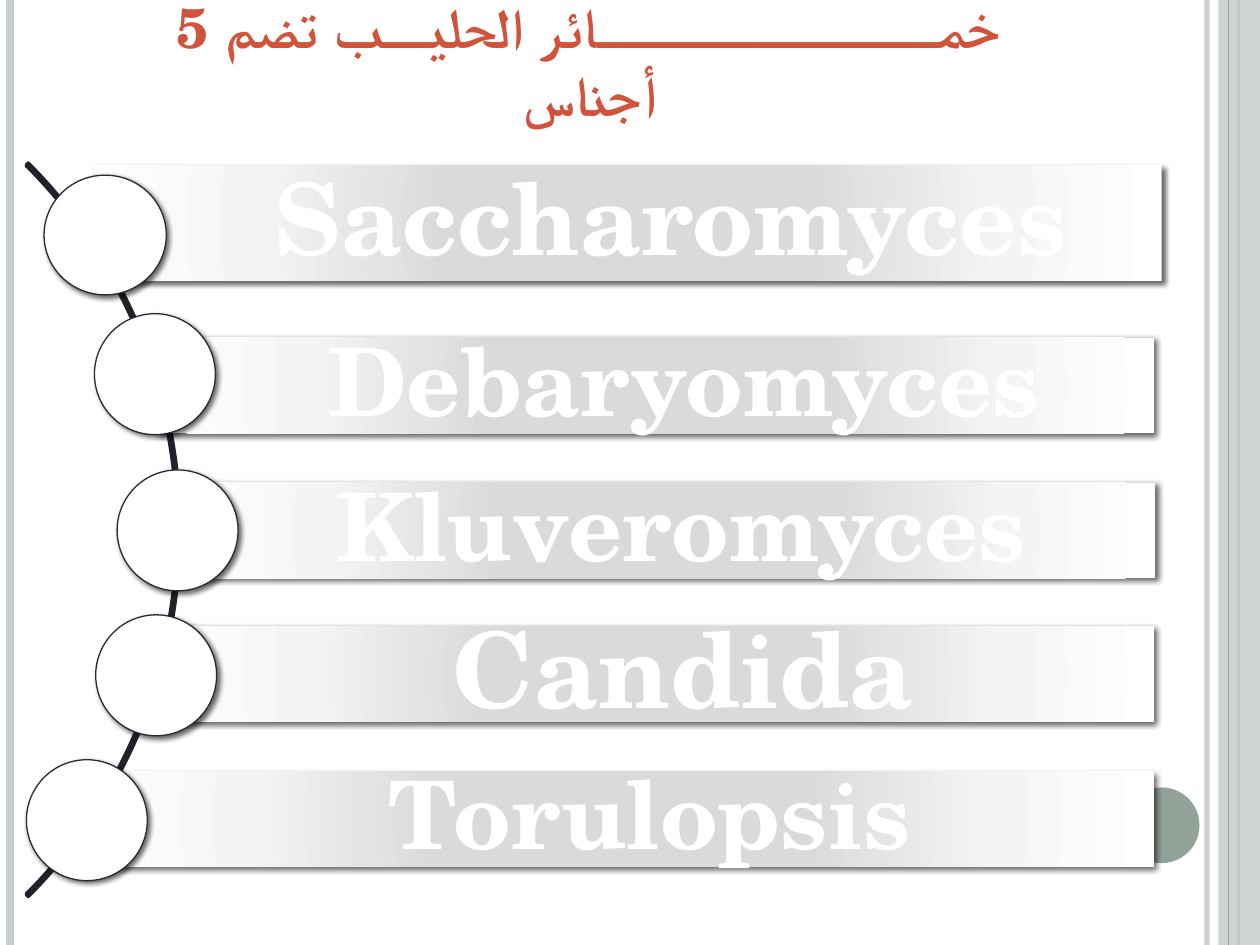
import dataclasses

import pptx
import pptx.dml.color
import pptx.enum.shapes
import pptx.enum.text
import pptx.oxml
import pptx.oxml.ns
import pptx.util

Inches = pptx.util.Inches
Pt = pptx.util.Pt
Kind = pptx.enum.shapes.MSO_SHAPE
Anchor = pptx.enum.text.MSO_ANCHOR
qn = pptx.oxml.ns.qn
NS = 'xmlns:a="http://schemas.openxmlformats.org/drawingml/2006/main"'
FONT = "TeX Gyre Schola"
STOPS = [(0, "DADADA"), (34, "DADADA"), (70, "F4F4F4"), (100, "FFFFFF")]


@dataclasses.dataclass
class Rule:
    x: float
    width: float
    color: str
    alpha: int = 100


@dataclasses.dataclass
class Genus:
    name: str
    left: float
    top: float
    right: float
    height: float
    size: int
    dot_x: float
    dot_y: float
    dot_w: float = 0.96
    dot_h: float = 0.96


RULES = [
    Rule(9.58, 3, "C8CECA", 93),
    Rule(0.08, 4.5, "C8CECA"),
    Rule(9.83, 1.5, "93A299"),
    Rule(9.75, 0.75, "93A299"),
]
GENERA = [
    Genus("Saccharomyces ", 0.75, 1.31, 9.22, 0.92, 57, 0.35, 1.39, 0.97, 0.95),
    Genus("Debaryomyces", 1.24, 2.68, 9.16, 0.76, 54, 0.75, 2.49),
    Genus(" Kluveromyces", 1.41, 3.83, 9.17, 0.76, 54, 0.93, 3.73),
    Genus("Candida", 1.24, 4.97, 9.16, 0.76, 60, 0.76, 4.88),
    Genus("Torulopsis", 0.69, 6.12, 9.16, 0.76, 54, 0.21, 6.03),
]


def rgb(code: str) -> pptx.dml.color.RGBColor:
    return pptx.dml.color.RGBColor.from_string(code)


def node(xml: str):
    return pptx.oxml.parse_xml(xml.replace(" NS", " " + NS, 1))


def fade(fill, alpha: int) -> None:
    color = fill._xPr.find(qn("a:solidFill"))[0]
    color.append(node(f'<a:alpha NS val="{alpha * 1000}"/>'))


def draw(slide, kind, x: float, y: float, w: float, h: float,
         fill: str = "", line: str = "", width: float = 0.75):
    shape = slide.shapes.add_shape(kind, Inches(x), Inches(y), Inches(w), Inches(h))
    if fill:
        shape.fill.solid()
        shape.fill.fore_color.rgb = rgb(fill)
    else:
        shape.fill.background()
    if line:
        shape.line.color.rgb = rgb(line)
        shape.line.width = Pt(width)
    else:
        shape.line.fill.background()
    shape.shadow.inherit = False
    return shape


def shade(shape) -> None:
    shape._element.spPr.find(qn("a:effectLst")).append(node(
        f'<a:outerShdw NS blurRad="{Pt(3)}" dist="{Pt(2)}" dir="2700000" '
        'algn="tl" rotWithShape="0"><a:srgbClr val="000000">'
        '<a:alpha val="60000"/></a:srgbClr></a:outerShdw>'))


def blend(shape) -> None:
    stops = "".join(f'<a:gs pos="{pos * 1000}"><a:srgbClr val="{code}"/></a:gs>'
                    for pos, code in STOPS)
    props = shape._element.spPr
    props.replace(props.find(qn("a:noFill")), node(
        f'<a:gradFill NS rotWithShape="1"><a:gsLst>{stops}</a:gsLst>'
        '<a:path path="circle"><a:fillToRect l="100000" t="100000" '
        'r="100000" b="100000"/></a:path></a:gradFill>'))


def write(slide, x: float, y: float, w: float, h: float,
          text: str, size: int, color: str, anchor):
    box = slide.shapes.add_textbox(Inches(x), Inches(y), Inches(w), Inches(h))
    frame = box.text_frame
    frame.text = text
    frame.word_wrap = True
    frame.vertical_anchor = anchor
    para = frame.paragraphs[0]
    para.alignment = pptx.enum.text.PP_ALIGN.CENTER
    para._p.get_or_add_pPr().set("rtl", "1")
    font = para.runs[0].font
    font.name = FONT
    font.size = Pt(size)
    font.bold = True
    font.color.rgb = rgb(color)
    font._element.append(node(f'<a:cs NS typeface="{FONT}"/>'))
    return frame


def add_rule(slide, rule: Rule) -> None:
    line = slide.shapes.add_connector(
        pptx.enum.shapes.MSO_CONNECTOR.STRAIGHT,
        Inches(rule.x), Inches(0), Inches(rule.x), Inches(7.5))
    line.line.color.rgb = rgb(rule.color)
    line.line.width = Pt(rule.width)
    if rule.alpha < 100:
        fade(line.line.fill, rule.alpha)
    line._element.spPr.append(node("<a:effectLst NS/>"))


def add_genus(slide, item: Genus) -> None:
    area = (item.left, item.top, item.right - item.left, item.height)
    bar = draw(slide, Kind.RECTANGLE, *area)
    blend(bar)
    shade(bar)
    frame = write(slide, *area, item.name, item.size, "FFFFFF", Anchor.MIDDLE)
    para = frame.paragraphs[0]
    para.line_spacing = 0.9
    para.space_after = Pt(0)
    after = para._p.pPr.find(qn("a:spcAft"))
    after.replace(after[0], node('<a:spcPct NS val="35000"/>'))
    frame.margin_left = Inches(0.61)
    frame.margin_right = frame.margin_top = frame.margin_bottom = Inches(item.size / 360)
    dot = draw(slide, Kind.OVAL, item.dot_x, item.dot_y,
               item.dot_w, item.dot_h, "FFFFFF", "292934")
    shade(dot)


def main() -> None:
    deck = pptx.Presentation()
    deck.slide_width, deck.slide_height = Inches(10), Inches(7.5)
    slide = deck.slides.add_slide(deck.slide_layouts[6])

    for rule in RULES[:3]:
        add_rule(slide, rule)
    band = draw(slide, Kind.RECTANGLE, 9.67, 0, 0.33, 7.5, "C8CECA")
    fade(band.fill, 87)
    add_rule(slide, RULES[3])
    draw(slide, Kind.OVAL, 8.92, 6.25, 0.6, 0.6, "93A299")

    title = write(slide, 0.59, 0.52, 8.17, 0.54,
                  "خمـــــــــــــــائر الحليــب تضم 5 أجناس",
                  32, "D2533C", Anchor.BOTTOM)
    title.margin_left = title.margin_right = Inches(0.5)
    title.paragraphs[0].runs[0].font._element.set("cap", "small")

    arc = draw(slide, Kind.BLOCK_ARC, -6.8, 0.09, 8.23, 8.23, line="21212A", width=2.08)
    for spot, value in enumerate((189, 27, 0.003)):
        arc.adjustments[spot] = value

    for item in GENERA:
        add_genus(slide, item)
    deck.save("out.pptx")


if __name__ == "__main__":
    main()
